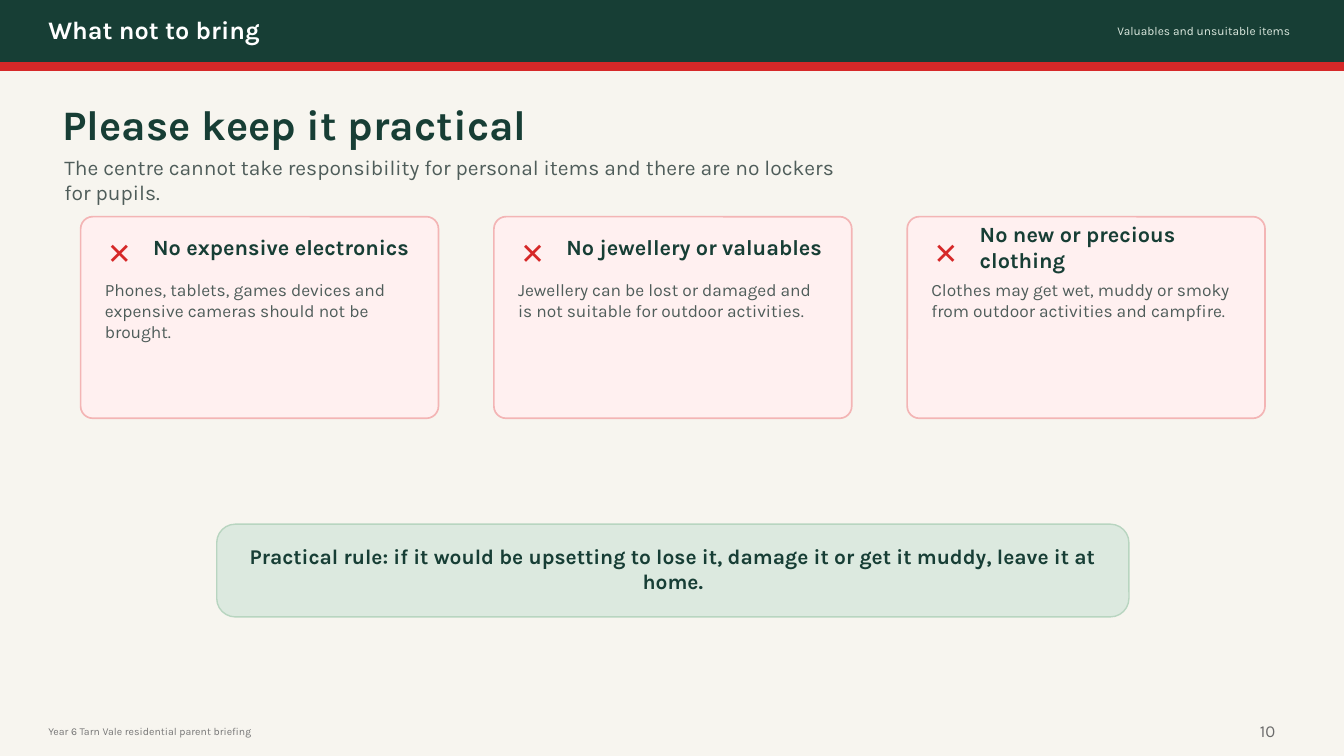
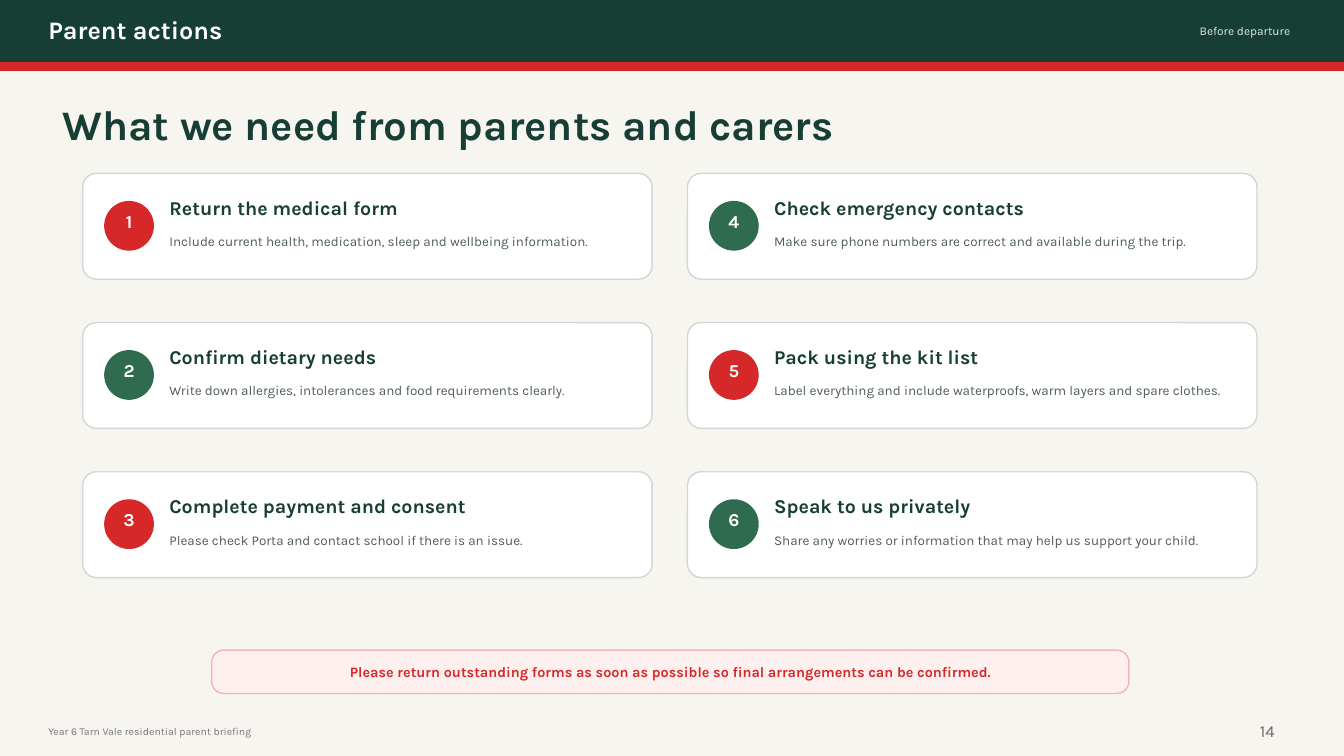
"""Build two slides of a school residential briefing for parents."""
from pptx import Presentation
from pptx.dml.color import RGBColor
from pptx.enum.shapes import MSO_SHAPE
from pptx.enum.text import MSO_ANCHOR, MSO_AUTO_SIZE, PP_ALIGN
from pptx.util import Pt

FOOTER = "Year 6 Tarn Vale residential parent briefing"

KEEP_PRACTICAL = {
    "section": "What not to bring",
    "topic": "Valuables and unsuitable items",
    "title": "Please keep it practical",
    "number": "10",
    "intro": "The centre cannot take responsibility for personal items and there are no lockers for pupils.",
    "items": [
        ("No expensive electronics",
         "Phones, tablets, games devices and expensive cameras should not be brought."),
        ("No jewellery or valuables",
         "Jewellery can be lost or damaged and is not suitable for outdoor activities."),
        ("No new or precious clothing",
         "Clothes may get wet, muddy or smoky from outdoor activities and campfire."),
    ],
    "rule": "Practical rule: if it would be upsetting to lose it, damage it or get it muddy, leave it at home.",
}

PARENT_ACTIONS = {
    "section": "Parent actions",
    "topic": "Before departure",
    "title": "What we need from parents and carers",
    "number": "14",
    "steps": [
        ("Return the medical form",
         "Include current health, medication, sleep and wellbeing information."),
        ("Confirm dietary needs",
         "Write down allergies, intolerances and food requirements clearly."),
        ("Complete payment and consent",
         "Please check Porta and contact school if there is an issue."),
        ("Check emergency contacts",
         "Make sure phone numbers are correct and available during the trip."),
        ("Pack using the kit list",
         "Label everything and include waterproofs, warm layers and spare clothes."),
        ("Speak to us privately",
         "Share any worries or information that may help us support your child."),
    ],
    "reminder": "Please return outstanding forms as soon as possible so final arrangements can be confirmed.",
}

COLORS = {
    "paper": "F7F5EF", "forest": "173E35", "green": "2F6B4F", "red": "D62828",
    "mint": "DCE9DF", "mint edge": "B8D5C0", "blush": "FFF0F0", "blush edge": "F3B5B5",
    "white": "FFFFFF", "card edge": "D0D8D2", "slate": "4F5D5A",
    "footer": "777777", "number": "6B6B6B",
}

STYLES = {
    "section": (18, True, "white"),
    "topic": (8.5, False, "mint"),
    "title": (30, True, "forest"),
    "intro": (15, False, "slate"),
    "cross": (21, False, "red"),
    "item heading": (15.5, True, "forest"),
    "item detail": (12.4, False, "slate"),
    "rule": (15, True, "forest"),
    "step number": (13, True, "white"),
    "step heading": (14, True, "forest"),
    "step detail": (9.6, False, "slate"),
    "reminder": (10.3, True, "red"),
    "footer": (7.5, False, "footer"),
    "number": (12, False, "number"),
}

SLIDE_W, SLIDE_H = 960, 540
NO_MARGINS = dict.fromkeys(("margin_left", "margin_top", "margin_right", "margin_bottom"), 0)


def rgb(color):
    return RGBColor.from_string(COLORS[color])


def points(*lengths):
    return [Pt(length) for length in lengths]


def write(frame, text, style, align=PP_ALIGN.LEFT, anchor=MSO_ANCHOR.MIDDLE, margins=NO_MARGINS):
    frame_format = {"word_wrap": True, "auto_size": MSO_AUTO_SIZE.NONE,
                    "vertical_anchor": anchor, **margins}
    for attribute, value in frame_format.items():
        setattr(frame, attribute, value)
    paragraph = frame.paragraphs[0]
    paragraph.alignment = align
    run = paragraph.add_run()
    run.text = text
    size, bold, color = STYLES[style]
    for attribute, value in {"name": "Karla", "size": Pt(size), "bold": bold}.items():
        setattr(run.font, attribute, value)
    run.font.color.rgb = rgb(color)


def add_text(slide, box, text, style, **layout):
    write(slide.shapes.add_textbox(*points(*box)).text_frame, text, style, **layout)


def add_panel(slide, box, fill, edge=None, width=1, kind=MSO_SHAPE.RECTANGLE, corner=None):
    panel = slide.shapes.add_shape(kind, *points(*box))
    panel.shadow.inherit = False
    panel.fill.solid()
    panel.fill.fore_color.rgb = rgb(fill)
    panel.line.color.rgb = rgb(edge or fill)
    panel.line.width = Pt(width)
    if corner is not None:
        panel.adjustments[0] = corner


def add_card(slide, box, fill, edge, corner, width=1):
    add_panel(slide, box, fill, edge, width, MSO_SHAPE.ROUNDED_RECTANGLE, corner)


def start_slide(deck, layout, content):
    slide = deck.slides.add_slide(layout)
    add_panel(slide, (0, 0, SLIDE_W, 44.64), "forest")
    add_text(slide, (34.56, 8.64, 763.2, 24.48), content["section"], "section")
    add_text(slide, (730.8, 11.52, 190.8, 20.16), content["topic"], "topic", align=PP_ALIGN.RIGHT)
    add_panel(slide, (0, 44.64, SLIDE_W, 5.76), "red")
    write(slide.shapes.title.text_frame, content["title"], "title")
    add_text(slide, (34.56, 515.52, 590.4, 12.96), FOOTER, "footer")
    add_text(slide, (892.8, 511.2, 62.64, 23.76), content["number"], "number",
             anchor=MSO_ANCHOR.TOP, margins={})
    return slide


def add_items(slide, content):
    add_text(slide, (46.08, 111.6, 561.6, 33.12), content["intro"], "intro")
    top, pitch = 154.8, 295.2
    for index, (heading, detail) in enumerate(content["items"]):
        left = 57.6 + index * pitch
        add_card(slide, (left, top, 255.6, 144), "blush", "blush edge", 0.06, width=1.2)
        add_text(slide, (left + 11.52, top + 9.36, 32.4, 32.4), "✕", "cross", align=PP_ALIGN.CENTER)
        add_text(slide, (left + 51.84, top + 10.08, 192.24, 23.04), heading, "item heading")
        add_text(slide, (left + 17.28, top + 44.64, 221.04, 87.84), detail, "item detail",
                 anchor=MSO_ANCHOR.TOP)
    add_card(slide, (154.8, 374.4, 651.6, 66.24), "mint", "mint edge", 0.2)
    add_text(slide, (176.4, 397.44, 608.4, 17.28), content["rule"], "rule", align=PP_ALIGN.CENTER)


def add_steps(slide, content):
    rows, column_pitch, row_pitch = 3, 432, 106.56
    for index, (heading, detail) in enumerate(content["steps"]):
        column, row = divmod(index, rows)
        left, top = 59.04 + column * column_pitch, 123.84 + row * row_pitch
        badge_left, text_left = left + 15.84, left + 61.92
        add_card(slide, (left, top, 406.8, 75.6), "white", "card edge", 0.13)
        add_panel(slide, (badge_left, top + 20.16, 34.56, 34.56),
                  ("red", "green")[index % 2], kind=MSO_SHAPE.OVAL)
        add_text(slide, (badge_left, top + 25.2, 34.56, 18), str(index + 1), "step number",
                 align=PP_ALIGN.CENTER)
        add_text(slide, (text_left, top + 15.84, 327.6, 17.28), heading, "step heading")
        add_text(slide, (text_left, top + 39.6, 327.6, 18), detail, "step detail")
    add_card(slide, (151.2, 464.4, 655.2, 30.96), "blush", "blush edge", 0.28)
    add_text(slide, (169.92, 474.48, 619.2, 10.08), content["reminder"], "reminder",
             align=PP_ALIGN.CENTER)


def main():
    deck = Presentation()
    deck.slide_width, deck.slide_height = points(SLIDE_W, SLIDE_H)
    background = deck.slide_master.background.fill
    background.solid()
    background.fore_color.rgb = rgb("paper")
    layout = deck.slide_layouts.get_by_name("Title Only")
    title_box = dict(zip(("left", "top", "width", "height"), points(44.64, 68.4, 554.4, 39.6)))
    for attribute, value in title_box.items():
        setattr(layout.placeholders[0], attribute, value)
    for content, add_body in ((KEEP_PRACTICAL, add_items), (PARENT_ACTIONS, add_steps)):
        add_body(start_slide(deck, layout, content), content)
    deck.save("out.pptx")


if __name__ == "__main__":
    main()
